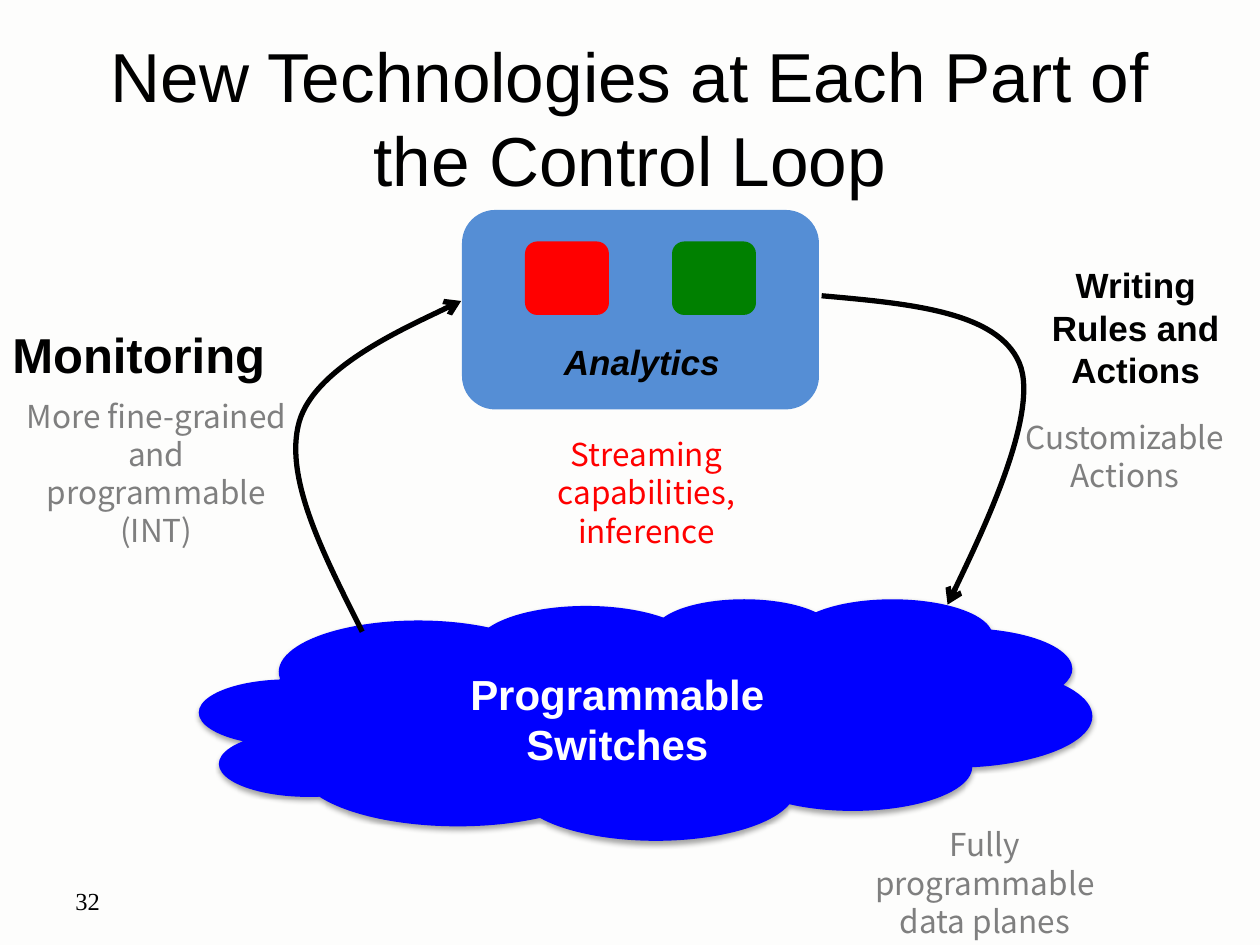
"""Build the control loop slide."""
from lxml import etree
from pptx import Presentation
from pptx.dml.color import RGBColor
from pptx.enum.shapes import MSO_SHAPE
from pptx.enum.text import MSO_ANCHOR, PP_ALIGN
from pptx.oxml import parse_xml
from pptx.oxml.ns import nsdecls, qn
from pptx.util import Pt

ROUNDED, CLOUD = MSO_SHAPE.ROUNDED_RECTANGLE, MSO_SHAPE.CLOUD
LEFT, CENTER = PP_ALIGN.LEFT, PP_ALIGN.CENTER
TOP, MIDDLE = MSO_ANCHOR.TOP, MSO_ANCHOR.MIDDLE
BLACK, WHITE, GRAY, RED = "000000", "FFFFFF", "7F7F7F", "FF0000"
ARIAL, NOTO, TIMES = "Arial", "Noto Sans CJK JP", "Times New Roman"
LEADING = 1.21


def rgb(value):
    """Turn a hex string into a colour."""
    return RGBColor.from_string(value)


def write(sp, text, size=18, font=NOTO, color=GRAY, bold=False, italic=False,
          align=CENTER, anchor=TOP):
    """Fill a shape with text, one paragraph for each line."""
    tf = sp.text_frame
    tf.word_wrap = True
    tf.vertical_anchor = anchor
    tf.text = text
    for p in tf.paragraphs:
        p.alignment = align
        p.line_spacing = Pt(round(size * LEADING, 1))
        for r in p.runs:
            r.font.size, r.font.name = Pt(size), font
            r.font.bold, r.font.italic = bold, italic
            r.font.color.rgb = rgb(color)


def add_label(slide, text, box, **fmt):
    """Add a text box at left, top, width, height."""
    sp = slide.shapes.add_textbox(*map(Pt, box))
    write(sp, text, **fmt)


def add_title(slide, text):
    """Place and fill the title placeholder."""
    sp = slide.shapes.title
    sp.left, sp.top, sp.width, sp.height = map(Pt, (36, 21.6, 648, 90))
    write(sp, text, size=39.6, font=ARIAL, color=BLACK, anchor=MIDDLE)


def add_block(slide, kind, box, fill):
    """Add a filled shape without outline."""
    sp = slide.shapes.add_shape(kind, *map(Pt, box))
    sp.shadow.inherit = False
    sp.fill.solid()
    sp.fill.fore_color.rgb = rgb(fill)
    sp.line.fill.background()
    return sp


def add_shadow(sp):
    """Give a shape a soft shadow below it."""
    effects = sp._element.spPr.find(qn("a:effectLst"))
    effects.append(parse_xml(
        f'<a:outerShdw {nsdecls("a")} blurRad="{Pt(3.1)}" dist="{Pt(1.8)}" '
        'dir="5400000" rotWithShape="0"><a:srgbClr val="000000">'
        '<a:alpha val="35000"/></a:srgbClr></a:outerShdw>'))


def add_curve(slide, points):
    """Draw a Bezier arrow through a start point and triples of controls."""
    points = [(Pt(x), Pt(y)) for x, y in points]
    builder = slide.shapes.build_freeform(*points[0])
    builder.add_line_segments(points[1:], close=False)
    sp = builder.convert_to_shape()
    sp.shadow.inherit = False
    sp.fill.background()
    sp.line.width = Pt(3)
    sp.line.color.rgb = rgb(BLACK)
    etree.SubElement(sp.line._get_or_add_ln(), qn("a:tailEnd"), type="arrow")
    path = sp._element.spPr.find(".//" + qn("a:path"))
    segments = path.findall(qn("a:lnTo"))
    for i in range(0, len(segments), 3):
        bezier = etree.SubElement(path, qn("a:cubicBezTo"))
        for segment in segments[i:i + 3]:
            bezier.append(segment[0])
            path.remove(segment)


def main():
    """Build and save the slide."""
    prs = Presentation()
    prs.slide_width, prs.slide_height = Pt(720), Pt(540)
    slide = prs.slides.add_slide(prs.slide_layouts[5])
    slide.background.fill.solid()
    slide.background.fill.fore_color.rgb = rgb("FDFDFC")

    add_title(slide, "New Technologies at Each Part of the Control Loop")
    add_label(slide, "32", (36, 500.4, 168, 28.8), size=14, font=TIMES,
              color=BLACK, align=LEFT, anchor=MIDDLE)

    add_block(slide, ROUNDED, (264, 120, 204, 114), "558ED5")
    add_shadow(add_block(slide, CLOUD, (114, 342, 510, 138), "0000FF"))
    add_curve(slide, [(207, 361), (185, 317), (162, 273), (171, 241),
                      (180, 209.5), (263.5, 172), (263.5, 172)])
    add_curve(slide, [(469.5, 169), (520, 173.5), (570, 178), (582.5, 207.5),
                      (595, 237), (541.5, 345.5), (541.5, 345.5)])
    for left, fill in ((300, RED), (384, "008000")):
        add_block(slide, ROUNDED, (left, 138, 48, 42), fill)

    heading = {"font": ARIAL, "color": BLACK, "bold": True}
    add_label(slide, "Monitoring", (0, 181.5, 162, 41), size=28, align=LEFT,
              **heading)
    add_label(slide, "Writing Rules and Actions", (582.5, 147, 133, 80),
              size=20, **heading)
    add_label(slide, "Analytics", (281.5, 191, 170.5, 31.5), size=20,
              italic=True, **heading)
    add_label(slide, "Programmable\nSwitches", (260.5, 378, 184.5, 65.5),
              size=24, **{**heading, "color": WHITE})

    for text, left, top, color in (
            ("More fine-grained and programmable\n(INT)", 1.5, 223, GRAY),
            ("Customizable\nActions", 555, 235, GRAY),
            ("Streaming capabilities, inference", 281.5, 245, RED),
            ("Fully programmable data planes", 475, 468, GRAY)):
        add_label(slide, text, (left, top, 175.7, 72), color=color)

    prs.save("out.pptx")


if __name__ == "__main__":
    main()
